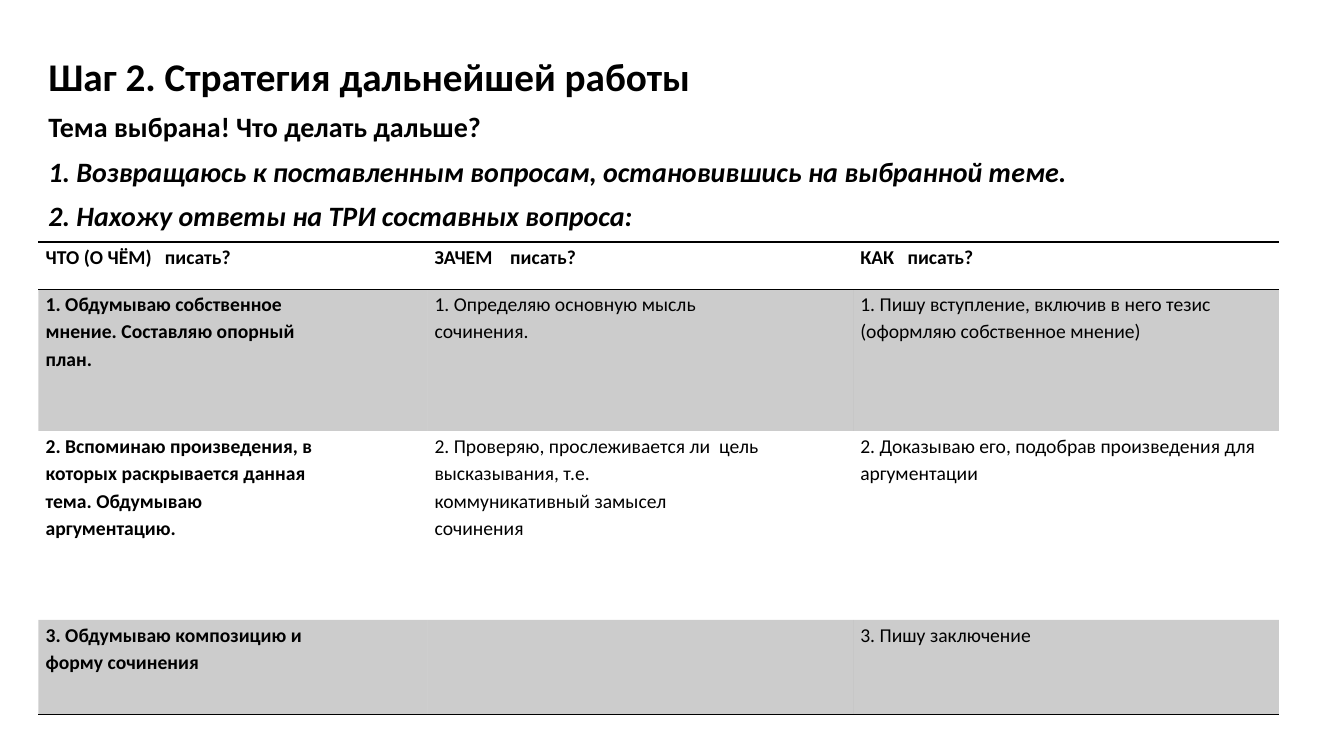
from lxml import etree
from pptx import Presentation
from pptx import util as u
from pptx.dml.color import RGBColor
from pptx.enum import text
from pptx.oxml.ns import qn

BLACK = "000000"
PLAIN_TABLE = "{2D5ABB26-0587-4C30-8999-92F81FD0307C}"

INTRO = [
    ("Шаг 2. Стратегия дальнейшей работы", {"size": u.Pt(28)}),
    ("Тема выбрана! Что делать дальше?", {}),
    ("1. Возвращаюсь к поставленным вопросам, остановившись на выбранной теме.", {"italic": True}),
    ("2. Нахожу ответы на ТРИ составных вопроса:", {"italic": True}),
]

QUESTIONS = [
    ["ЧТО (О ЧЁМ)   писать?", "ЗАЧЕМ    писать?", "КАК   писать?"],
    ["1. Обдумываю собственное\nмнение. Составляю опорный\nплан.",
     "1. Определяю основную мысль\nсочинения.",
     "1. Пишу вступление, включив в него тезис  (оформляю собственное мнение)"],
    ["2. Вспоминаю произведения, в\nкоторых раскрывается данная\nтема. Обдумываю\nаргументацию.",
     "2. Проверяю, прослеживается ли  цель высказывания, т.е.\nкоммуникативный замысел\nсочинения",
     "2. Доказываю его, подобрав произведения для аргументации"],
    ["3. Обдумываю композицию и\nформу сочинения", "", "3. Пишу заключение"],
]
ROW_UNITS = [1, 3, 4, 2]
COLUMN_WIDTHS = [9.8, 10.73, 10.73]


def color(value):
    return RGBColor.from_string(value)


def apply(target, values):
    for name, value in values.items():
        setattr(target, name, value)


def style_font(font, values):
    apply(font, {"name": "Calibri", **values})
    font.color.rgb = color(BLACK)


def shade(cell, percent):
    cell.fill.solid()
    cell.fill.fore_color.rgb = color(BLACK)
    tint = cell.fill._xPr.find(".//" + qn("a:srgbClr"))
    etree.SubElement(tint, qn("a:alpha"), val=str(percent * 1000))


def rule_cell(cell, edges):
    properties = cell._tc.get_or_add_tcPr()
    for position, edge in enumerate(edges):
        line = etree.Element(qn("a:ln" + edge), w=str(u.Pt(1)))
        ink = etree.SubElement(line, qn("a:solidFill"))
        etree.SubElement(ink, qn("a:srgbClr"), val=BLACK)
        properties.insert(position, line)


def add_intro(slide, left, top, width, height):
    frame = slide.shapes.add_textbox(*map(u.Cm, (left, top, width, height))).text_frame
    apply(frame, {"word_wrap": True, "auto_size": text.MSO_AUTO_SIZE.NONE})
    for index, (wording, look) in enumerate(INTRO):
        line = frame.paragraphs[0] if index == 0 else frame.add_paragraph()
        apply(line, {"line_spacing": 0.9, "space_before": u.Pt(10)})
        run = line.add_run()
        run.text = wording
        style_font(run.font, {"size": u.Pt(20), "bold": True, **look})


def fill_cell(cell, wording, bold):
    apply(cell, {"margin_left": u.Cm(0.18), "margin_right": u.Cm(0.18),
                 "margin_top": 0, "margin_bottom": 0})
    cell.text_frame.text = wording
    for line in cell.text_frame.paragraphs:
        line.line_spacing = 1.15
        for run in line.runs:
            style_font(run.font, {"size": u.Pt(14), "bold": bold})


def add_questions(slide, left, top, width, height):
    box = map(u.Cm, (left, top, width, height))
    questions = slide.shapes.add_table(len(QUESTIONS), len(COLUMN_WIDTHS), *box).table
    apply(questions, {"first_row": False, "horz_banding": False})
    questions._tbl.tblPr.find(qn("a:tableStyleId")).text = PLAIN_TABLE
    for column, share in zip(questions.columns, COLUMN_WIDTHS):
        column.width = u.Cm(width * share / sum(COLUMN_WIDTHS))
    for row, units in zip(questions.rows, ROW_UNITS):
        row.height = u.Cm(height * units / sum(ROW_UNITS))
    edges = {0: "TB", len(QUESTIONS) - 1: "B"}
    for r, wordings in enumerate(QUESTIONS):
        for c, wording in enumerate(wordings):
            cell = questions.cell(r, c)
            fill_cell(cell, wording, r == 0 or c == 0)
            if r % 2:
                shade(cell, 20)
            else:
                cell.fill.background()
            rule_cell(cell, edges.get(r, ""))


def main():
    deck = Presentation()
    apply(deck, {"slide_width": u.Cm(33.87), "slide_height": u.Cm(19.05)})
    slide = deck.slides.add_slide(deck.slide_layouts[6])
    add_intro(slide, 0.97, 1.32, 31.72, 15.82)
    add_questions(slide, 0.97, 6.1, 31.26, 11.9)
    deck.save("out.pptx")


if __name__ == "__main__":
    main()
